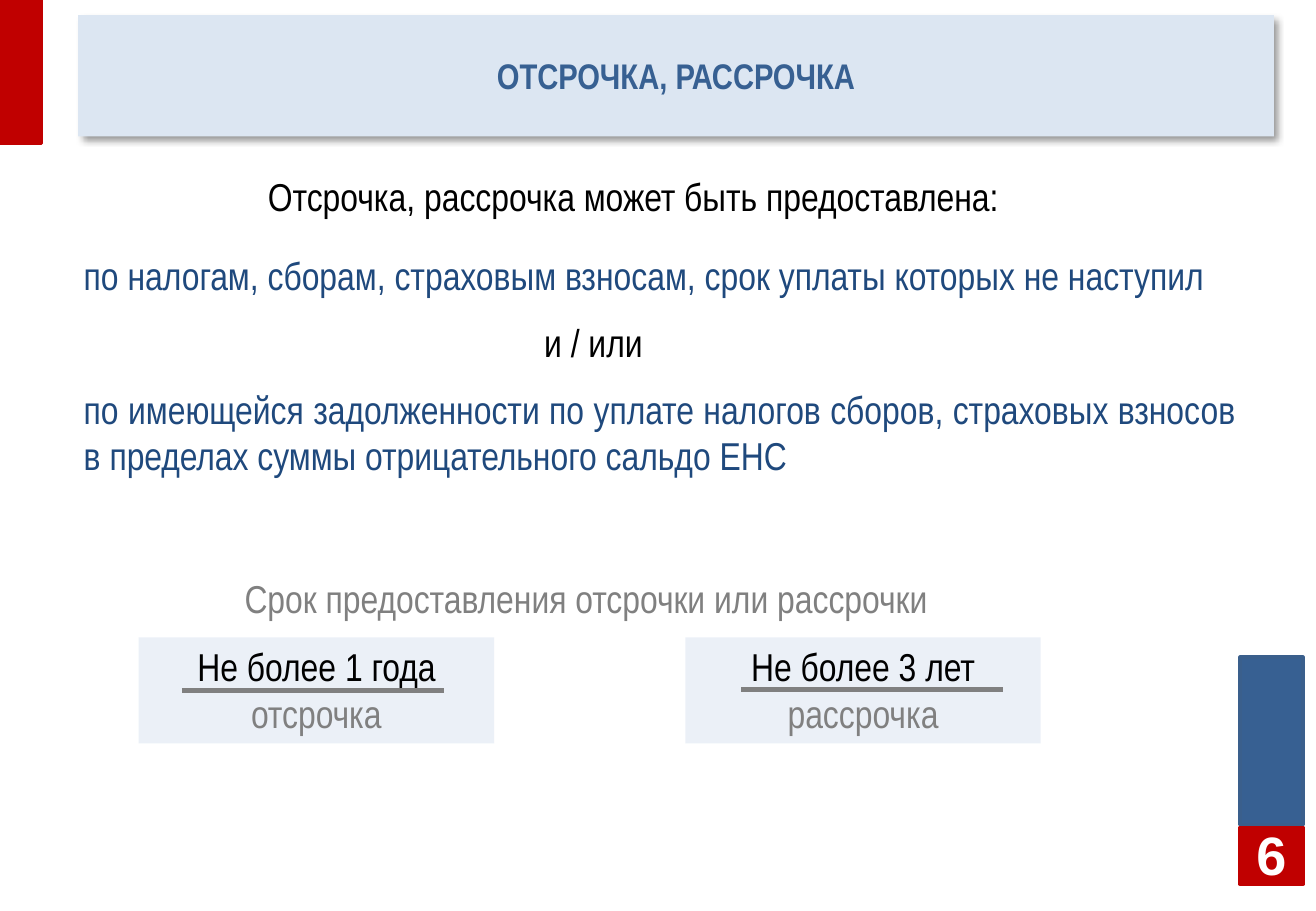
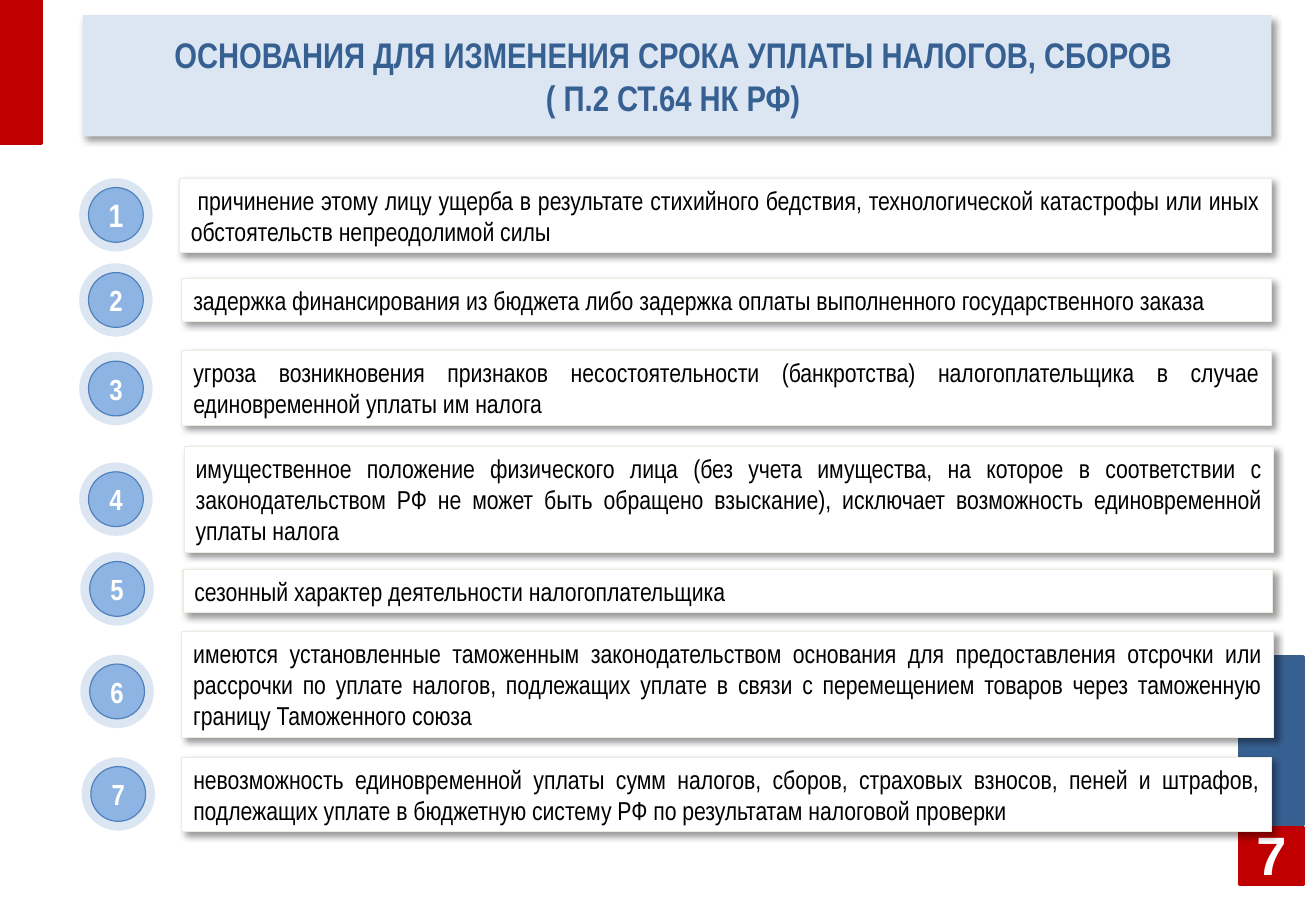
from lxml.etree import SubElement
from pptx import Presentation
from pptx.dml.color import RGBColor
from pptx.enum.shapes import MSO_CONNECTOR, MSO_SHAPE
from pptx.enum.text import MSO_ANCHOR, MSO_AUTO_SIZE, PP_ALIGN
from pptx.oxml.ns import qn
from pptx.util import Inches, Pt

FONT = "Arial Narrow"
BLUE, RED, PALE = "376092", "C00000", "DCE6F2"
NAVY, GRAY, BLACK, WHITE = "1F497D", "808080", "000000", "FFFFFF"
BANDS = [
    ((10.64, 5.64, 0.54, 1.44), BLUE, "3A5F8C"),
    ((10.64, 7.1, 0.54, 0.49), RED, RED),
    ((0, 0, 0.36, 1.23), RED, RED),
]
NOTES = [
    ((2.2, 1.43, 6.72, 0.5), "Отсрочка, рассрочка может быть предоставлена:", BLACK),
    ((0.62, 2.11, 10.09, 0.5),
     "по налогам, сборам, страховым взносам, срок уплаты которых не наступил", NAVY),
    ((4.57, 2.69, 1.31, 0.5), "и / или", BLACK),
    ((0.62, 3.26, 10.08, 0.91),
     "по имеющейся задолженности по уплате налогов сборов, страховых взносов "
     "в пределах суммы отрицательного сальдо ЕНС", NAVY),
    ((2, 4.88, 8.16, 0.5), "Срок предоставления отсрочки или рассрочки", GRAY),
]
TERMS = [
    (1.19, 1.56, 5.93, "Не более 1 года", "отсрочка"),
    (5.88, 6.36, 5.92, "Не более 3 лет", "рассрочка"),
]
GROUNDS = [
    ((1.54, 1.53, 9.37), 2, (0.68, 1.53),
     " причинение этому лицу ущерба в результате стихийного бедствия, "
     "технологической катастрофы или иных обстоятельств непреодолимой силы"),
    ((1.56, 2.39, 9.35), 1, (0.68, 2.26),
     "задержка финансирования из бюджета либо задержка оплаты "
     "выполненного государственного заказа"),
    ((1.56, 3.01, 9.35), 2, (0.68, 3.02),
     "угроза возникновения признаков несостоятельности (банкротства) "
     "налогоплательщика в случае единовременной уплаты им налога"),
    ((1.58, 3.83, 9.35), 3, (0.68, 3.97),
     "имущественное положение физического лица (без учета имущества, "
     "на которое в соответствии с законодательством РФ не может быть обращено "
     "взыскание), исключает возможность единовременной уплаты налога"),
    ((1.57, 4.89, 9.35), 1, (0.69, 4.74),
     "сезонный характер деятельности налогоплательщика"),
    ((1.56, 5.42, 9.37), 3, (0.69, 5.62),
     "имеются установленные таможенным законодательством основания "
     "для предоставления отсрочки или рассрочки по уплате налогов, подлежащих "
     "уплате в связи с перемещением товаров через таможенную границу "
     "Таможенного союза"),
    ((1.56, 6.5, 9.35), 2, (0.7, 6.5),
     "невозможность единовременной уплаты сумм налогов, сборов, "
     "страховых взносов, пеней и штрафов, подлежащих уплате в бюджетную систему "
     "РФ по результатам налоговой проверки"),
]


def tint(color, value):
    """Set a colour from a hex string."""
    color.rgb = RGBColor.from_string(value)


def place(shape, box):
    """Move a shape to a box given in inches."""
    shape.left, shape.top, shape.width, shape.height = map(Inches, box)


def paint(shape, fill, line=None, width=0.75, alpha=None):
    """Fill and outline a shape without a shadow."""
    shape.shadow.inherit = False
    shape.fill.solid()
    tint(shape.fill.fore_color, fill)
    if alpha:
        color = shape._element.spPr.find(qn("a:solidFill"))[0]
        SubElement(color, qn("a:alpha")).set("val", str(alpha * 1000))
    if line:
        tint(shape.line.color, line)
        shape.line.width = Pt(width)
    else:
        shape.line.fill.background()


def shade(shape):
    """Add a soft shadow at the lower right."""
    effects = shape._element.spPr.find(qn("a:effectLst"))
    shadow = SubElement(effects, qn("a:outerShdw"), blurRad=str(Pt(4)),
                        dist=str(Pt(3)), dir=str(45 * 60000), algn="tl",
                        rotWithShape="0")
    color = SubElement(shadow, qn("a:srgbClr"), val=BLACK)
    SubElement(color, qn("a:alpha"), val="40000")


def write(shape, *lines, size=24, colors=(BLACK,), font=FONT, bold=False,
          align=PP_ALIGN.JUSTIFY, anchor=MSO_ANCHOR.TOP, side=0.1):
    """Write paragraphs, one colour for each, into a shape."""
    frame = shape.text_frame
    frame.word_wrap = True
    frame.auto_size = MSO_AUTO_SIZE.NONE
    frame.vertical_anchor = anchor
    frame.margin_left = frame.margin_right = Inches(side)
    frame.margin_top = frame.margin_bottom = Inches(0.05)
    for index, (text, color) in enumerate(zip(lines, colors)):
        para = frame.add_paragraph() if index else frame.paragraphs[0]
        para.text = text
        para.alignment = align
        for run in para.runs:
            run.font.name = font
            run.font.size = Pt(size)
            run.font.bold = bold
            tint(run.font.color, color)


def block(slide, box, fill, kind=MSO_SHAPE.RECTANGLE, **look):
    """Add a painted preset shape."""
    shape = slide.shapes.add_shape(kind, *map(Inches, box))
    paint(shape, fill, **look)
    return shape


def label(slide, box, *lines, **style):
    """Add a text box."""
    write(slide.shapes.add_textbox(*map(Inches, box)), *lines, **style)


def rule(slide, left, top, width):
    """Add a thick gray horizontal line."""
    line = slide.shapes.add_connector(
        MSO_CONNECTOR.STRAIGHT, *map(Inches, (left, top, left + width, top)))
    tint(line.line.color, GRAY)
    line.line.width = Pt(3)
    SubElement(line._element.spPr, qn("a:effectLst"))


def badge(slide, left, top, number):
    """Add a ringed number."""
    block(slide, (left, top, 0.63, 0.63), PALE, kind=MSO_SHAPE.OVAL)
    disc = block(slide, (left + 0.08, top + 0.08, 0.47, 0.47), "8EB4E3",
                 kind=MSO_SHAPE.OVAL, line="4F81BD")
    write(disc, str(number), size=20 if number == 1 else 18, colors=(WHITE,),
          bold=True, align=PP_ALIGN.CENTER, anchor=MSO_ANCHOR.MIDDLE, side=0)


def start(deck, title, box, number):
    """Add a slide with bands, page number and title."""
    slide = deck.slides.add_slide(deck.slide_layouts[5])
    for area, fill, line in BANDS:
        block(slide, area, fill, line=line, width=2)
    center = dict(bold=True, align=PP_ALIGN.CENTER,
                  anchor=MSO_ANCHOR.MIDDLE, side=0)
    label(slide, (10.62, 7.12, 0.58, 0.42), str(number), size=33.4,
          colors=(WHITE,), font="Arial", **center)
    head = slide.shapes.title
    place(head, box)
    paint(head, PALE)
    shade(head)
    write(head, title, size=22, colors=(BLUE,), **center)
    return slide


def terms(deck):
    """Build the slide on deferral and its terms."""
    slide = start(deck, "ОТСРОЧКА, РАССРОЧКА", (0.67, 0.13, 10.26, 1.04), 6)
    for box, text, color in NOTES:
        label(slide, box, text, colors=(color,))
    for left, begin, level, limit, name in TERMS:
        card = block(slide, (left, 5.47, 3.05, 0.91), PALE, alpha=57)
        write(card, limit, name, colors=(BLACK, GRAY), align=PP_ALIGN.CENTER)
        rule(slide, begin, level, 2.25)


def grounds(deck):
    """Build the slide with the numbered grounds."""
    title = "ОСНОВАНИЯ ДЛЯ ИЗМЕНЕНИЯ СРОКА УПЛАТЫ НАЛОГОВ, СБОРОВ \v( П.2 СТ.64 НК РФ) "
    slide = start(deck, title, (0.71, 0.13, 10.2, 1.04), 7)
    for number, (area, rows, mark, text) in enumerate(GROUNDS, 1):
        card = block(slide, (*area, 0.1 + 0.27 * rows), WHITE, line="EEECE1")
        shade(card)
        write(card, text, size=16, anchor=MSO_ANCHOR.MIDDLE)
        badge(slide, *mark, number)


def main():
    """Build and save the deck."""
    deck = Presentation()
    deck.slide_width = Pt(813)
    deck.slide_height = Pt(563)
    terms(deck)
    grounds(deck)
    deck.save("out.pptx")


if __name__ == "__main__":
    main()
